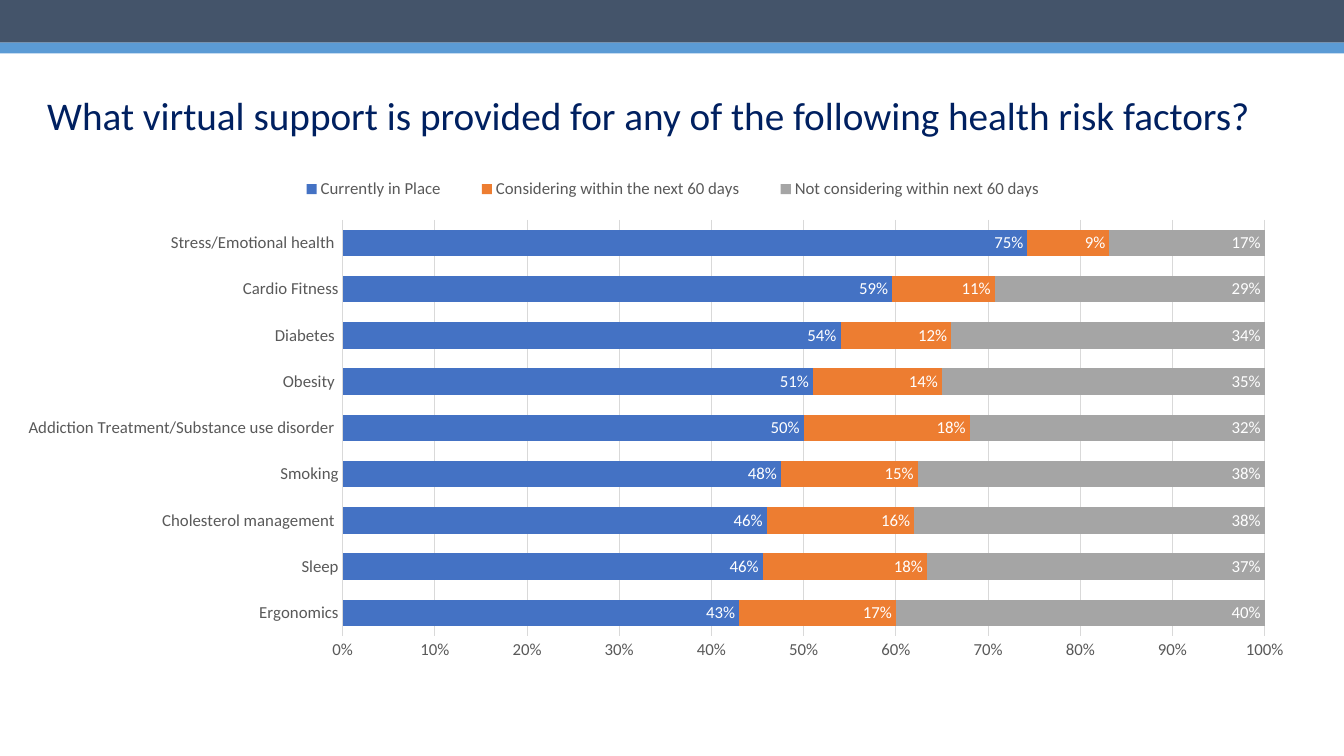
from lxml import etree
from pptx import Presentation
from pptx import util as u
from pptx.chart.data import CategoryChartData
from pptx.dml.color import RGBColor
from pptx.enum import chart as charts, shapes, text
from pptx.oxml.ns import qn

SLATE = RGBColor(0x44, 0x54, 0x6A)
SKY = RGBColor(0x5B, 0x9B, 0xD5)
NAVY = RGBColor(0x00, 0x20, 0x60)
GREY = RGBColor(0x59, 0x59, 0x59)
RULE = RGBColor(0xD9, 0xD9, 0xD9)
WHITE = RGBColor(0xFF, 0xFF, 0xFF)
BLUE = RGBColor(0x44, 0x72, 0xC4)
ORANGE = RGBColor(0xED, 0x7D, 0x31)
SILVER = RGBColor(0xA5, 0xA5, 0xA5)
FONT = "Calibri"

TITLE = "What virtual support is provided for any of the following health risk factors?"
SERIES = [
    ("Currently in Place", BLUE),
    ("Considering within the next 60 days", ORANGE),
    ("Not considering within next 60 days", SILVER),
]
RISKS = [
    ("Ergonomics", 0.43, 0.17, 0.40),
    ("Sleep", 0.46, 0.18, 0.37),
    ("Cholesterol management ", 0.46, 0.16, 0.38),
    ("Smoking", 0.48, 0.15, 0.38),
    ("Addiction Treatment/Substance use disorder ", 0.50, 0.18, 0.32),
    ("Obesity ", 0.51, 0.14, 0.35),
    ("Diabetes ", 0.54, 0.12, 0.34),
    ("Cardio Fitness", 0.59, 0.11, 0.29),
    ("Stress/Emotional health ", 0.75, 0.09, 0.17),
]


def inches(box):
    return [u.Inches(length) for length in box]


def style_font(font, size, color):
    font.name = FONT
    font.size = u.Pt(size)
    font.color.rgb = color


def add_band(page, box, color):
    band = page.shapes.add_shape(shapes.MSO_SHAPE.RECTANGLE, *inches(box))
    band.shadow.inherit = False
    band.fill.solid()
    band.fill.fore_color.rgb = color
    band.line.fill.background()


def add_header(page, box):
    left, top, width, height = box
    split = height * 0.8
    add_band(page, (left, top, width, split), SLATE)
    add_band(page, (left, top + split, width, height - split), SKY)


def add_title(page, box):
    frame = page.shapes.add_textbox(*inches(box)).text_frame
    frame.word_wrap = True
    frame.vertical_anchor = text.MSO_ANCHOR.MIDDLE
    frame.text = TITLE
    para = frame.paragraphs[0]
    para.line_spacing = 0.9
    style_font(para.runs[0].font, 28, NAVY)


def place_part(part, index, shares, inner=False):
    for old in part.findall(qn("c:layout")):
        part.remove(old)
    layout = etree.Element(qn("c:layout"))
    manual = etree.SubElement(layout, qn("c:manualLayout"))
    settings = [("layoutTarget", "inner")] if inner else []
    settings += [("xMode", "edge"), ("yMode", "edge")]
    settings += zip("xywh", shares)
    for name, value in settings:
        etree.SubElement(manual, qn(f"c:{name}")).set("val", str(value))
    part.insert(index, layout)


def style_axes(chart):
    for axis in (chart.category_axis, chart.value_axis):
        axis.major_tick_mark = charts.XL_TICK_MARK.NONE
        axis.minor_tick_mark = charts.XL_TICK_MARK.NONE
        style_font(axis.tick_labels.font, 12, GREY)
    chart.category_axis.has_major_gridlines = False
    chart.value_axis.has_major_gridlines = True
    for line in (chart.category_axis.format.line, chart.value_axis.major_gridlines.format.line):
        line.color.rgb = RULE
        line.width = u.Pt(0.75)
    chart.value_axis.format.line.fill.background()
    chart.value_axis.tick_labels.number_format = "0%"
    chart.value_axis.tick_labels.number_format_is_linked = False


def style_bars(plot):
    plot.gap_width = 75
    plot.overlap = 100
    plot.vary_by_categories = False
    for series, (_, color) in zip(plot.series, SERIES):
        series.format.fill.solid()
        series.format.fill.fore_color.rgb = color
        labels = series.data_labels
        labels.show_value = True
        labels.position = charts.XL_LABEL_POSITION.INSIDE_END
        labels.number_format = "0%"
        labels.number_format_is_linked = False
        style_font(labels.font, 12, WHITE)


def add_risk_chart(page, box):
    names, *columns = zip(*RISKS)
    data = CategoryChartData(number_format="0%")
    data.categories = names
    for (name, _), values in zip(SERIES, columns):
        data.add_series(name, values)
    chart = page.shapes.add_chart(
        charts.XL_CHART_TYPE.BAR_STACKED_100, *inches(box), data
    ).chart
    chart.has_title = False
    chart.font.name = FONT
    chart.font.size = u.Pt(10)
    style_axes(chart)
    style_bars(chart.plots[0])
    chart.has_legend = True
    chart.legend.position = charts.XL_LEGEND_POSITION.BOTTOM
    chart.legend.include_in_layout = False
    style_font(chart.legend.font, 12, GREY)
    root = chart.element if hasattr(chart, "element") else chart._chartSpace
    place_part(root.find(".//" + qn("c:plotArea")), 0, (0.256, 0.153, 0.723, 0.717), True)
    place_part(root.find(".//" + qn("c:legend")), 1, (0.2, 0.07, 0.63, 0.06))


def main():
    deck = Presentation()
    deck.slide_width = u.Inches(13.33)
    deck.slide_height = u.Inches(7.5)
    page = deck.slides.add_slide(deck.slide_layouts[6])
    add_header(page, (0, 0, 13.33, 0.53))
    add_title(page, (0.37, 0.44, 12.96, 1.45))
    add_risk_chart(page, (0.16, 1.3, 12.65, 5.76))
    deck.save("out.pptx")


if __name__ == "__main__":
    main()
